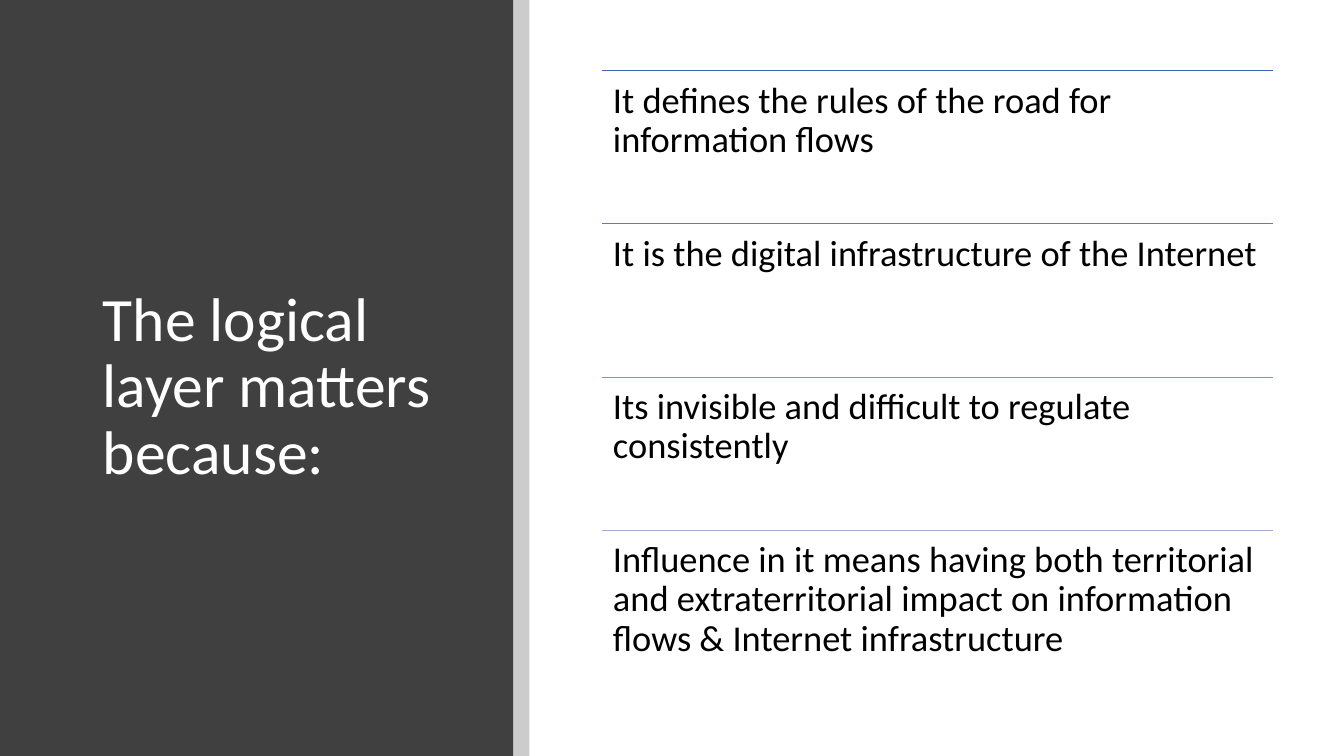
from dataclasses import dataclass

from lxml.etree import SubElement
from pptx import Presentation
from pptx.dml.color import RGBColor
from pptx.enum.shapes import MSO_CONNECTOR, MSO_SHAPE
from pptx.enum.text import MSO_ANCHOR, MSO_AUTO_SIZE, PP_ALIGN
from pptx.oxml.ns import qn
from pptx.util import Inches, Pt


@dataclass(frozen=True)
class Theme:
    font: str = "Calibri"
    panel: str = "404040"
    band: str = "000000"
    band_opacity: int = 20
    title: str = "FFFFFF"
    body: str = "000000"
    title_size: int = 44
    body_size: int = 26
    rule_width: float = 0.5
    line_spacing: float = 0.9


class SlideBuilder:
    def __init__(self, slide, theme):
        self.slide = slide
        self.theme = theme

    def block(self, left, width, height, color, opacity=100):
        block = self.slide.shapes.add_shape(
            MSO_SHAPE.RECTANGLE, Inches(left), 0, Inches(width), Inches(height))
        block.shadow.inherit = False
        block.fill.solid()
        block.fill.fore_color.rgb = RGBColor.from_string(color)
        block.line.fill.background()
        if opacity < 100:
            color_element = block._element.spPr.find(".//" + qn("a:srgbClr"))
            SubElement(color_element, qn("a:alpha"), val=str(opacity * 1000))

    def set_text(self, frame, text, size, color, anchor):
        frame.word_wrap = True
        frame.auto_size = MSO_AUTO_SIZE.NONE
        frame.vertical_anchor = anchor
        frame.text = text
        paragraph = frame.paragraphs[0]
        paragraph.alignment = PP_ALIGN.LEFT
        paragraph.line_spacing = self.theme.line_spacing
        paragraph.font.name = self.theme.font
        paragraph.font.size = Pt(size)
        paragraph.font.color.rgb = RGBColor.from_string(color)

    def title(self, text, left, top, width, height):
        title = self.slide.shapes.title
        title.left, title.top = Inches(left), Inches(top)
        title.width, title.height = Inches(width), Inches(height)
        self.set_text(title.text_frame, text, self.theme.title_size,
                      self.theme.title, MSO_ANCHOR.MIDDLE)
        # Bring the title in front of the panel
        self.slide.shapes._spTree.append(title._element)

    def rule(self, left, top, width, color):
        rule = self.slide.shapes.add_connector(
            MSO_CONNECTOR.STRAIGHT, Inches(left), Inches(top),
            Inches(left + width), Inches(top))
        rule.line.color.rgb = RGBColor.from_string(color)
        rule.line.width = Pt(self.theme.rule_width)
        SubElement(rule._element.spPr, qn("a:effectLst"))

    def reason(self, text, left, top, width, height, inset=0.11):
        reason = self.slide.shapes.add_textbox(
            Inches(left), Inches(top), Inches(width), Inches(height))
        frame = reason.text_frame
        frame.margin_left = frame.margin_right = Inches(inset)
        frame.margin_top = frame.margin_bottom = Inches(inset)
        self.set_text(frame, text, self.theme.body_size, self.theme.body,
                      MSO_ANCHOR.TOP)


REASONS = [
    ("It defines the rules of the road for information flows", "3E67B2"),
    ("It is the digital infrastructure of the Internet", "5A7CC3"),
    ("Its invisible and difficult to regulate consistently", "7D95CD"),
    ("Influence in it means having both territorial and extraterritorial "
     "impact on information flows & Internet infrastructure", "9FAED8"),
]


def main():
    theme = Theme()
    presentation = Presentation()
    presentation.slide_width = Inches(13.33)
    presentation.slide_height = Inches(7.5)
    title_only = presentation.slide_layouts[5]
    builder = SlideBuilder(presentation.slides.add_slide(title_only), theme)

    # Dark panel with its translucent edge band
    builder.block(0, 5.09, 7.5, theme.panel)
    builder.block(5.09, 0.16, 7.5, theme.band, theme.band_opacity)
    builder.title("The logical layer matters because:", 0.92, 0.89, 3.65, 5.91)

    # Reasons in equal rows, each under a rule
    left, top, width, row_height = 5.97, 0.7, 6.66, 1.52
    for row, (text, rule_color) in enumerate(REASONS):
        row_top = top + row * row_height
        builder.rule(left, row_top, width, rule_color)
        builder.reason(text, left, row_top, width, row_height)

    presentation.save("out.pptx")


if __name__ == "__main__":
    main()
